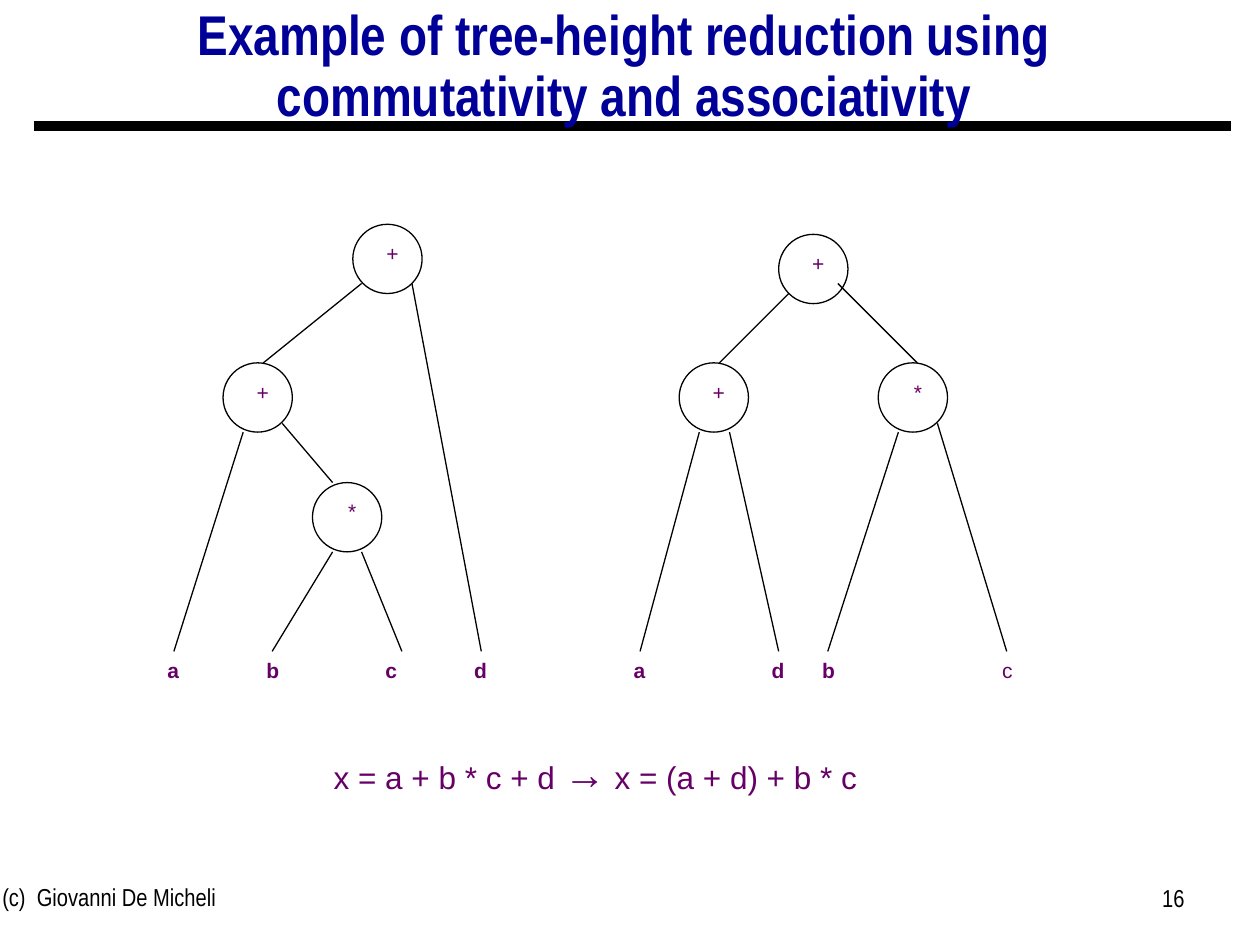
from lxml import etree
from pptx import Presentation
from pptx import util as u
from pptx.dml.color import RGBColor as Rgb
from pptx.enum import shapes, text
from pptx.oxml.ns import qn

theme = {
    "ink": Rgb.from_string("000000"),
    "head": Rgb.from_string("000099"),
    "term": Rgb.from_string("660066"),
    "sans": "Arial",
    "slim": "Arial Narrow",
    "title": 32, "sum": 18, "arrow": 24, "foot": 14, "label": 12,
    "thin": 0.75, "rule": 6,
}

deck = Presentation()
deck.slide_width, deck.slide_height = u.Inches(10), u.Inches(7.5)
slide = deck.slides.add_slide(deck.slide_layouts[5])

# The slide is a grid of 100 columns by 75 rows.
col, row = deck.slide_width / 100, deck.slide_height / 75
mid, right = text.PP_ALIGN.CENTER, text.PP_ALIGN.RIGHT


def write(home, words, box, size, hue="term", font="sans", bold=False, align=mid):
    """Add a text box at box = (left, top, width, height) in grid cells."""
    x, y, w, h = box
    note = home.add_textbox(int(x * col), int(y * row), int(w * col), int(h * row))
    frame = note.text_frame
    frame.word_wrap = True
    para = frame.paragraphs[0]
    para.alignment = align
    for part in words:
        para.add_run().text = part
    for run in para.runs:
        run.font.name = theme[font]
        run.font.size = u.Pt(theme[size])
        run.font.bold = bold
        run.font.color.rgb = theme[hue]
    return para


def link(x1, y1, x2, y2, width="thin"):
    edge = slide.shapes.add_connector(
        shapes.MSO_CONNECTOR.STRAIGHT,
        int(x1 * col), int(y1 * row), int(x2 * col), int(y2 * row))
    edge.line.color.rgb = theme["ink"]
    edge.line.width = u.Pt(theme[width])
    etree.SubElement(edge._element.spPr, qn("a:effectLst"))
    return edge


# Title, with the rule behind it
title = slide.shapes.title
title.left, title.top = int(2.9 * col), 0
title.width, title.height = int(93.3 * col), int(10.8 * row)
frame = title.text_frame
frame.text = "Example of tree-height reduction using commutativity and associativity"
frame.word_wrap = True
frame.auto_size = text.MSO_AUTO_SIZE.NONE
frame.vertical_anchor = text.MSO_ANCHOR.MIDDLE
para = frame.paragraphs[0]
para.alignment, para.line_spacing = mid, 0.9
face = para.runs[0].font
face.name, face.size, face.bold = theme["slim"], u.Pt(theme["title"]), True
face.color.rgb = theme["head"]

rule = link(2.7, 10, 97.7, 10, "rule")
title._element.addprevious(rule._element)

# Footer
write(slide.shapes, ["(c)  Giovanni De Micheli"], (-0.8, 69.5, 31.7, 5.2),
      "foot", "ink", "slim", align=text.PP_ALIGN.LEFT)
write(slide.shapes, ["16"], (71.7, 69.6, 23.3, 5.2), "foot", "ink", "slim", align=right)

# Operator nodes: sign, left, top
size = 5.5
nodes = [("+", 28, 17.8), ("+", 17.7, 28.8), ("*", 24.8, 38.3),
         ("*", 69.7, 28.8), ("+", 53.9, 28.8), ("+", 61.8, 18.6)]
for sign, x, y in nodes:
    node = slide.shapes.add_group_shape()
    ring = node.shapes.add_shape(
        shapes.MSO_SHAPE.OVAL, int(x * col), int(y * row),
        int(size * col), int(size * row))
    ring.shadow.inherit = False
    ring.fill.background()
    ring.line.color.rgb = theme["ink"]
    ring.line.width = u.Pt(theme["thin"])
    write(node.shapes, [sign], (x, y + 0.8, 6.3, 3), "label")

# Edges between operators
for edge in [(28.7, 22.5, 20.9, 28.8), (22.4, 33.6, 26.4, 38.3),
             (62.6, 23.3, 57.1, 28.8), (66.5, 22.5, 72.8, 28.8)]:
    link(*edge)

# Operands: name, start of the edge, foot of the edge, centre of the name
base = 51.7
leaves = [("a", 19.3, 34.3, 13.8, 13.75), ("b", 26.4, 43.8, 21.6, 21.65),
          ("c", 28.7, 43.8, 31.9, 31.05), ("d", 32.7, 22.5, 38.2, 38.15),
          ("a", 55.5, 34.3, 50.8, 50.75), ("d", 57.9, 34.3, 61.8, 61.75),
          ("b", 71.3, 34.3, 65.7, 65.75), ("c", 74.4, 33.6, 79.9, 79.95)]
for name, x, y, foot, spot in leaves:
    link(x, y, foot, base)
    last = spot == leaves[-1][-1]
    write(slide.shapes, [name], (spot - 2.35, base, 4.7, 3), "label", bold=not last)

# Rewritten expression
para = write(slide.shapes, ["x = a + b * c + d ", "→", " x = (a + d) + b * c"],
             (13, 58.8, 68.5, 5), "sum")
para.runs[1].font.size = u.Pt(theme["arrow"])

deck.save("out.pptx")
